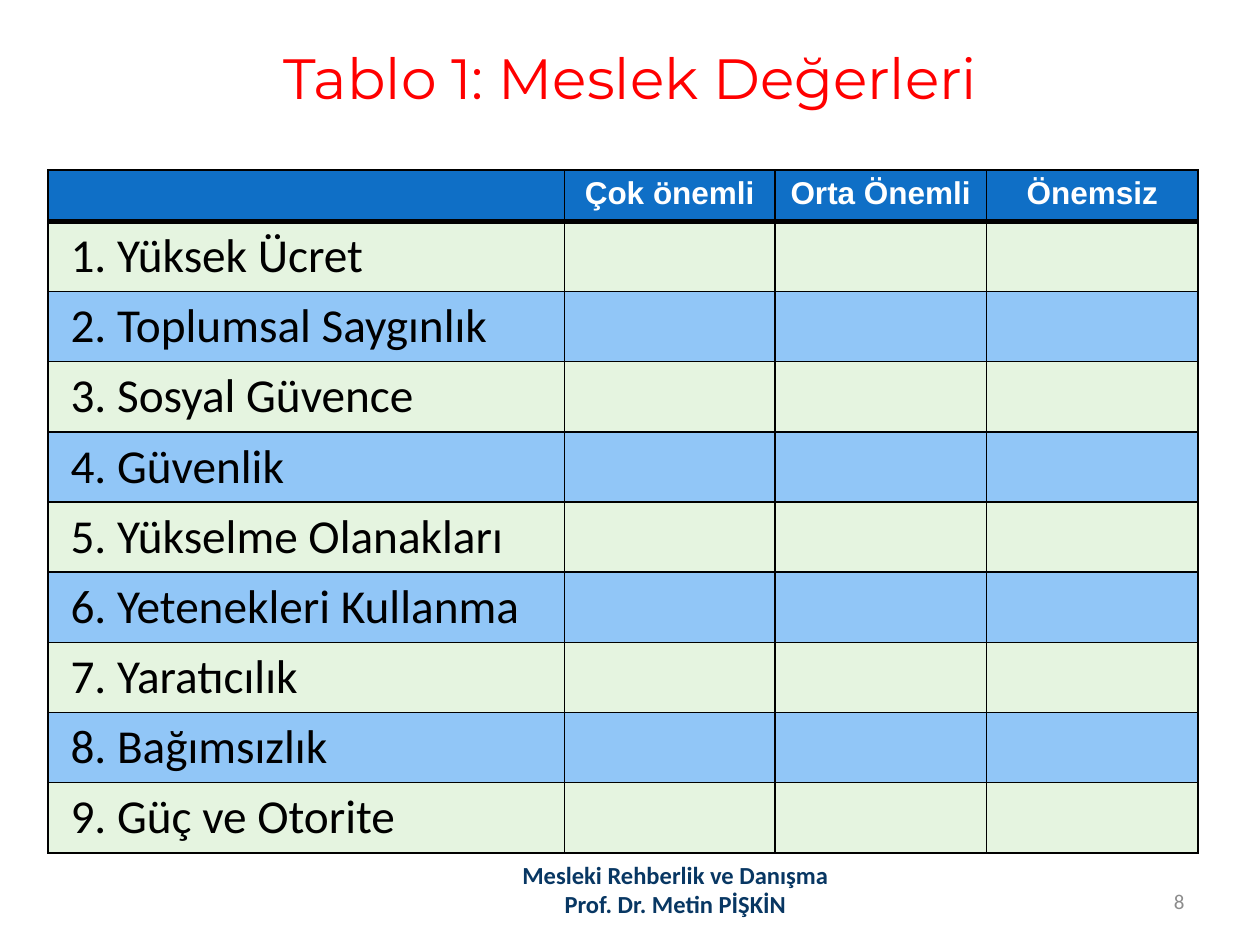
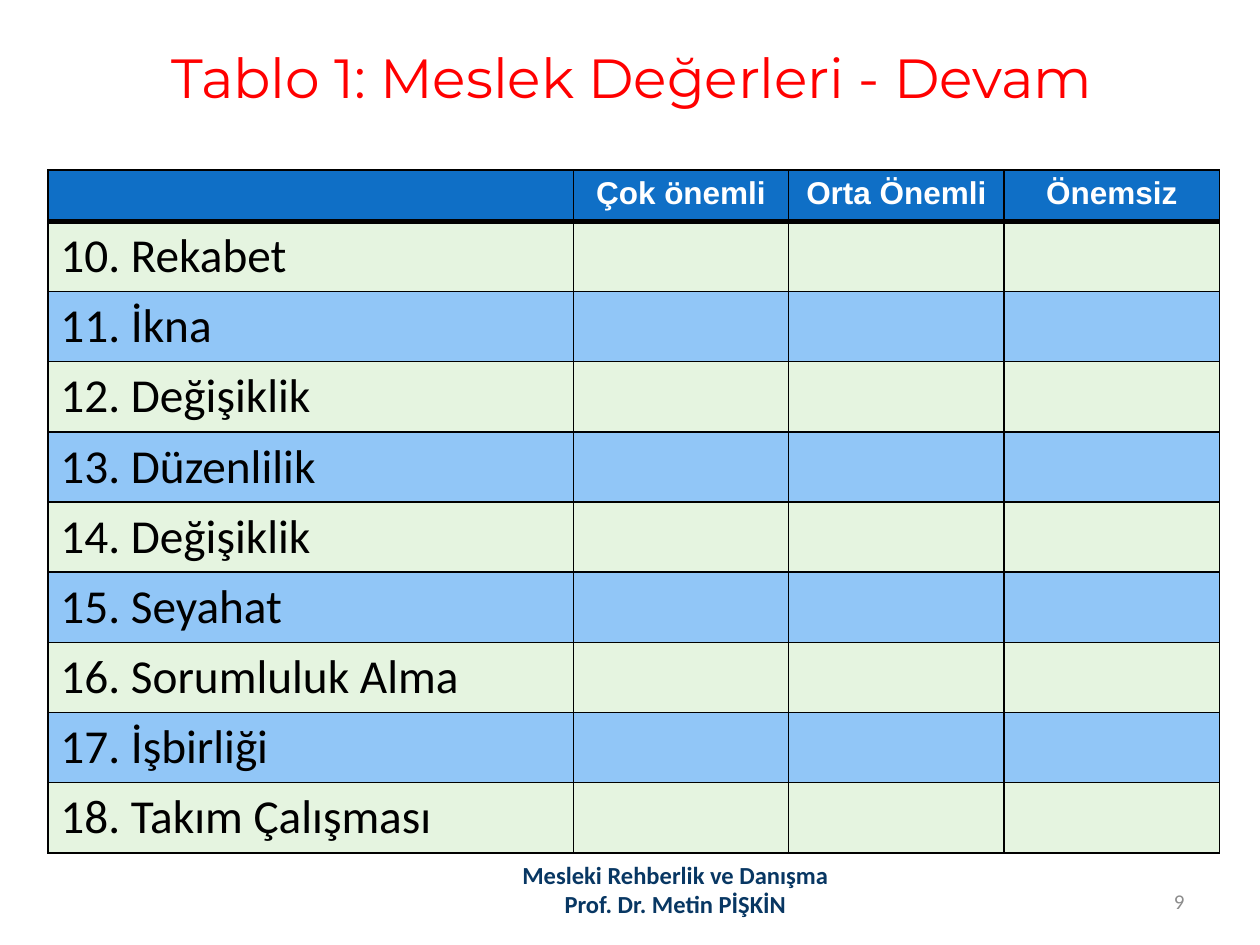
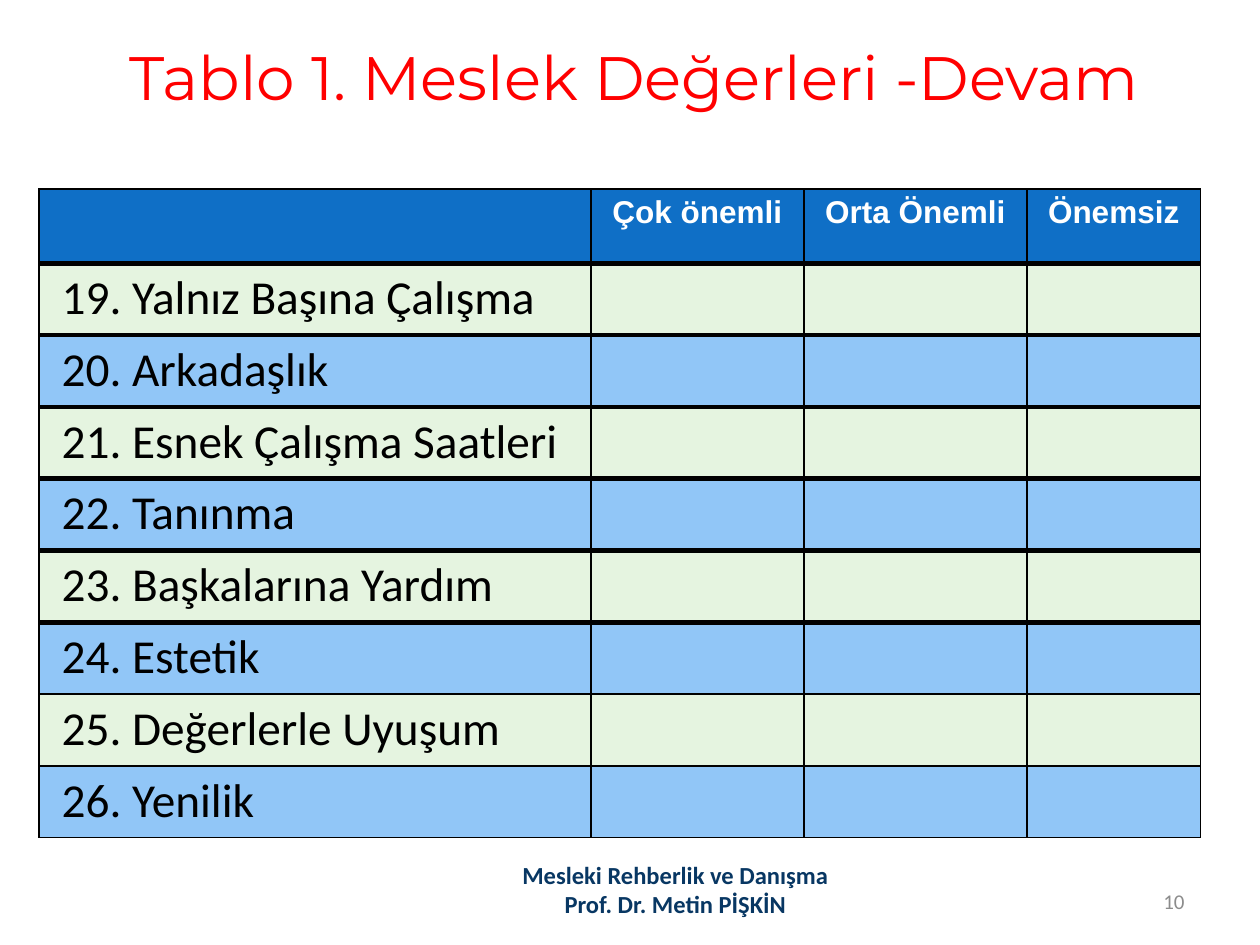
from dataclasses import dataclass

from lxml.etree import SubElement
from pptx import Presentation
from pptx.dml.color import RGBColor
from pptx.enum.text import MSO_ANCHOR, MSO_AUTO_SIZE, PP_ALIGN
from pptx.oxml.ns import qn
from pptx.presentation import Presentation as Deck
from pptx.slide import Slide
from pptx.table import _Cell as Cell
from pptx.text.text import TextFrame, _Paragraph as Paragraph
from pptx.util import Emu, Inches, Pt

SLIDE_WIDTH, SLIDE_HEIGHT = Inches(10), Inches(7.5)
GRID_COLUMNS, GRID_ROWS = 100, 75
TITLE_ONLY_LAYOUT = 5


@dataclass(frozen=True)
class TextStyle:
    font: str
    size: float
    color: str
    bold: bool = False


@dataclass(frozen=True)
class Theme:
    background: str = "FFFFFF"
    header_fill: str = "0F6FC6"
    band_fills: tuple[str, str] = ("E5F4E0", "91C6F7")
    rule_color: str = "000000"
    thin_rule: float = 1
    thick_rule: float = 3
    title_font: str = "Montserrat"
    title_color: str = "FF0000"
    header: TextStyle = TextStyle("Arial", 18, "FFFFFF", True)
    value: TextStyle = TextStyle("Calibri", 27, "000000")
    footer: TextStyle = TextStyle("Calibri", 14, "083763", True)
    page_number: TextStyle = TextStyle("Calibri", 12, "8C8C8C")


@dataclass(frozen=True)
class Box:
    """A place on the grid, in grid columns and rows."""
    left: float
    top: float
    width: float
    height: float


@dataclass(frozen=True)
class ValueTable:
    left: float
    top: float
    column_widths: tuple[float, ...]
    header_height: float
    row_height: float
    first_number: int
    values: tuple[str, ...]
    indent: float = 0.8
    hanging: float = 0
    thick_rules: int = 1


@dataclass(frozen=True)
class ValueSlide:
    page: int
    title: str
    title_size: float
    title_box: Box
    table: ValueTable


THEME = Theme()
RATINGS = ("Çok önemli", "Orta Önemli", "Önemsiz")
FOOTER_LINES = ("Mesleki Rehberlik ve Danışma", "Prof. Dr. Metin PİŞKİN")
FOOTER_BOX = Box(37.4, 68.2, 32.4, 5.2)
PAGE_NUMBER_BOX = Box(71.7, 69.5, 23.3, 4)

SLIDES = (
    ValueSlide(
        8, "Tablo 1: Meslek Değerleri", 32.4, Box(5, 3, 90, 6.2),
        ValueTable(3.8, 13.5, (41, 16.7, 16.8, 16.8), 4, 5.4, 1, (
            "Yüksek Ücret", "Toplumsal Saygınlık", "Sosyal Güvence",
            "Güvenlik", "Yükselme Olanakları", "Yetenekleri Kullanma",
            "Yaratıcılık", "Bağımsızlık", "Güç ve Otorite")),
    ),
    ValueSlide(
        9, "Tablo 1: Meslek Değerleri - Devam ", 31.5, Box(3.8, 3, 93.8, 6.2),
        ValueTable(3.8, 13.5, (41.7, 17.1, 17.1, 17.1), 4, 5.4, 10, (
            "Rekabet", "İkna", "Değişiklik", "Düzenlilik", "Değişiklik",
            "Seyahat", "Sorumluluk Alma", "İşbirliği", "Takım Çalışması"),
            indent=3.9, hanging=3.9),
    ),
    ValueSlide(
        10, "Tablo 1. Meslek Değerleri -Devam", 35, Box(3.8, 0, 93.1, 12),
        ValueTable(3.1, 15, (43.8, 16.9, 17.7, 13.8), 5.9, 5.7, 19, (
            "Yalnız Başına Çalışma", "Arkadaşlık", "Esnek Çalışma Saatleri",
            "Tanınma", "Başkalarına Yardım", "Estetik", "Değerlerle Uyuşum",
            "Yenilik"), thick_rules=6),
    ),
)


def columns(count: float) -> Emu:
    return Emu(round(SLIDE_WIDTH * count / GRID_COLUMNS))


def rows(count: float) -> Emu:
    return Emu(round(SLIDE_HEIGHT * count / GRID_ROWS))


def place(box: Box) -> tuple[Emu, Emu, Emu, Emu]:
    return columns(box.left), rows(box.top), columns(box.width), rows(box.height)


def add_run(paragraph: Paragraph, text: str, style: TextStyle,
            alignment: PP_ALIGN) -> None:
    paragraph.alignment = alignment
    run = paragraph.add_run()
    run.text = text
    run.font.name = style.font
    run.font.size = Pt(style.size)
    run.font.bold = style.bold
    run.font.color.rgb = RGBColor.from_string(style.color)


def add_lines(frame: TextFrame, lines: tuple[str, ...], style: TextStyle,
              alignment: PP_ALIGN, anchor: MSO_ANCHOR) -> None:
    frame.word_wrap = True
    frame.auto_size = MSO_AUTO_SIZE.NONE
    frame.vertical_anchor = anchor
    for index, line in enumerate(lines):
        paragraph = frame.add_paragraph() if index else frame.paragraphs[0]
        add_run(paragraph, line, style, alignment)


def set_title(slide: Slide, content: ValueSlide) -> None:
    title = slide.shapes.title
    title.left, title.top, title.width, title.height = place(content.title_box)
    style = TextStyle(THEME.title_font, content.title_size, THEME.title_color)
    add_lines(title.text_frame, (content.title,), style,
              PP_ALIGN.CENTER, MSO_ANCHOR.MIDDLE)


def format_cell(cell: Cell, fill: str, top: float, bottom: float) -> None:
    """Draw the four borders, then the fill, in the order the format asks for."""
    properties = cell._tc.get_or_add_tcPr()
    widths = {"a:lnL": THEME.thin_rule, "a:lnR": THEME.thin_rule,
              "a:lnT": top, "a:lnB": bottom}
    for tag, width in widths.items():
        line = SubElement(properties, qn(tag), w=str(Pt(width)))
        solid = SubElement(line, qn("a:solidFill"))
        SubElement(solid, qn("a:srgbClr"), val=THEME.rule_color)
    cell.fill.solid()
    cell.fill.fore_color.rgb = RGBColor.from_string(fill)


def add_value_table(slide: Slide, spec_table: ValueTable) -> None:
    row_count = len(spec_table.values) + 1
    heights = [spec_table.header_height] + [spec_table.row_height] * (row_count - 1)
    box = Box(spec_table.left, spec_table.top,
              sum(spec_table.column_widths), sum(heights))
    table = slide.shapes.add_table(
        row_count, len(spec_table.column_widths), *place(box)).table
    table.horz_banding = False
    for column, width in zip(table.columns, spec_table.column_widths):
        column.width = columns(width)

    rules = [THEME.thick_rule if 1 <= index <= spec_table.thick_rules
             else THEME.thin_rule for index in range(row_count + 1)]
    for index, (row, height) in enumerate(zip(table.rows, heights)):
        row.height = rows(height)
        fill = THEME.band_fills[(index - 1) % 2] if index else THEME.header_fill
        for cell in row.cells:
            format_cell(cell, fill, rules[index], rules[index + 1])

    for column_index, rating in enumerate(RATINGS, start=1):
        paragraph = table.cell(0, column_index).text_frame.paragraphs[0]
        add_run(paragraph, rating, THEME.header, PP_ALIGN.CENTER)
    for row_index, value in enumerate(spec_table.values, start=1):
        paragraph = table.cell(row_index, 0).text_frame.paragraphs[0]
        properties = paragraph._p.get_or_add_pPr()
        properties.set("marL", str(columns(spec_table.indent)))
        properties.set("indent", str(columns(-spec_table.hanging)))
        number = spec_table.first_number + row_index - 1
        add_run(paragraph, f"{number}. {value}", THEME.value, PP_ALIGN.LEFT)


def add_footer(slide: Slide, page: int) -> None:
    number = slide.shapes.add_textbox(*place(PAGE_NUMBER_BOX))
    add_lines(number.text_frame, (str(page),), THEME.page_number,
              PP_ALIGN.RIGHT, MSO_ANCHOR.MIDDLE)
    footer = slide.shapes.add_textbox(*place(FOOTER_BOX))
    add_lines(footer.text_frame, FOOTER_LINES, THEME.footer,
              PP_ALIGN.CENTER, MSO_ANCHOR.BOTTOM)


def add_value_slide(presentation: Deck, content: ValueSlide) -> None:
    layout = presentation.slide_layouts[TITLE_ONLY_LAYOUT]
    slide = presentation.slides.add_slide(layout)
    slide.background.fill.solid()
    slide.background.fill.fore_color.rgb = RGBColor.from_string(THEME.background)
    set_title(slide, content)
    add_value_table(slide, content.table)
    add_footer(slide, content.page)


def main() -> None:
    presentation = Presentation()
    presentation.slide_width = SLIDE_WIDTH
    presentation.slide_height = SLIDE_HEIGHT
    for content in SLIDES:
        add_value_slide(presentation, content)
    presentation.save("out.pptx")


if __name__ == "__main__":
    main()
